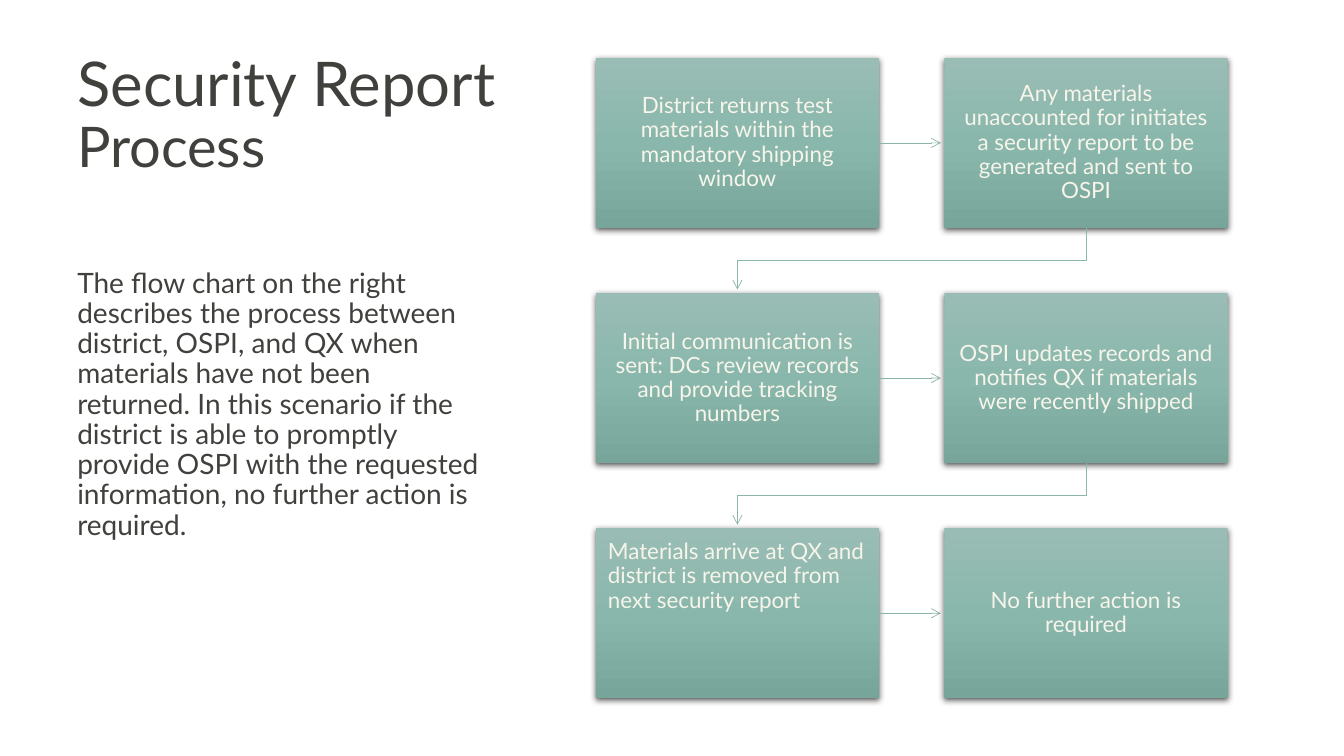
from pptx import Presentation
from pptx.dml.color import RGBColor
from pptx.enum.shapes import MSO_CONNECTOR, MSO_SHAPE
from pptx.enum.text import MSO_ANCHOR, MSO_AUTO_SIZE, PP_ALIGN
from pptx.oxml import parse_xml
from pptx.oxml.ns import nsdecls, qn
from pptx.util import Pt

TITLE = [("Security Report ", 44), ("Process", 40)]
BODY = [("The flow chart on the right describes the process between district, OSPI, "
         "and QX when materials have not been returned. In this scenario if the "
         "district is able to promptly provide OSPI with the requested information, "
         "no further action is required.", 20)]
STEPS = [
    ("District returns test materials within the mandatory shipping window",
     PP_ALIGN.CENTER, MSO_ANCHOR.MIDDLE),
    ("Any materials unaccounted for initiates a security report to be generated "
     "and sent to OSPI", PP_ALIGN.CENTER, MSO_ANCHOR.MIDDLE),
    ("Initial communication is sent: DCs review records and provide tracking numbers",
     PP_ALIGN.CENTER, MSO_ANCHOR.MIDDLE),
    ("OSPI updates records and notifies QX if materials were recently shipped",
     PP_ALIGN.CENTER, MSO_ANCHOR.MIDDLE),
    ("Materials arrive at QX and district is removed from next security report",
     PP_ALIGN.LEFT, MSO_ANCHOR.TOP),
    ("No further action is required", PP_ALIGN.CENTER, MSO_ANCHOR.MIDDLE),
]
THEME = {
    "font": "Lato", "text": "40403D", "step_text": "F7F5EB", "step_size": 16,
    "line": "8CB5AB", "shadow": "000000",
    "gradient": [(0, "99BDB4"), (50, "8AB7AC"), (100, "78A59A")],
}
LEFT, TOP, WIDTH, HEIGHT = 425.5, 41.3, 202.5, 121.5
COL_STEP, ROW_STEP, COLS = 249, 168, 2
ARROW_GAP, INSET, ELBOW_DROP = 2.5, 8.8, 23.4


def write(tf, runs, color, align, anchor):
    tf.word_wrap = True
    tf.auto_size = MSO_AUTO_SIZE.NONE
    tf.vertical_anchor = anchor
    p = tf.paragraphs[0]
    p.alignment = align
    p.line_spacing = 0.9
    p.space_before = Pt(0)
    for text, size in runs:
        r = p.add_run()
        r.text = text
        r.font.name = THEME["font"]
        r.font.size = Pt(size)
        r.font.color.rgb = RGBColor.from_string(color)
    return p


def place(sp, left, top, width, height):
    sp.left, sp.top, sp.width, sp.height = Pt(left), Pt(top), Pt(width), Pt(height)


def add_step(s, left, top, text, align, anchor):
    sp = s.shapes.add_shape(MSO_SHAPE.RECTANGLE, Pt(left), Pt(top), Pt(WIDTH), Pt(HEIGHT))
    sp.line.fill.background()
    sp.shadow.inherit = False
    spPr = sp.element.spPr
    stops = "".join(f'<a:gs pos="{pos * 1000}"><a:srgbClr val="{c}"/></a:gs>'
                    for pos, c in THEME["gradient"])
    spPr.find(qn("a:prstGeom")).addnext(parse_xml(
        f'<a:gradFill {nsdecls("a")} rotWithShape="1"><a:gsLst>{stops}</a:gsLst>'
        '<a:lin ang="5400000" scaled="0"/></a:gradFill>'))
    spPr.find(qn("a:effectLst")).append(parse_xml(
        f'<a:outerShdw {nsdecls("a")} blurRad="{Pt(4.5)}" dist="{Pt(1.5)}" dir="5400000" '
        f'algn="ctr" rotWithShape="0"><a:srgbClr val="{THEME["shadow"]}">'
        '<a:alpha val="63000"/></a:srgbClr></a:outerShdw>'))
    tf = sp.text_frame
    tf.margin_left = tf.margin_right = tf.margin_top = tf.margin_bottom = Pt(INSET)
    write(tf, [(text, THEME["step_size"])], THEME["step_text"], align, anchor)


def style_arrow(sp):
    sp.line.color.rgb = RGBColor.from_string(THEME["line"])
    sp.line.width = Pt(0.5)
    spPr = sp.element.spPr
    spPr.find(qn("a:ln")).append(parse_xml(f'<a:tailEnd {nsdecls("a")} type="arrow"/>'))
    if spPr.find(qn("a:effectLst")) is None:
        spPr.append(parse_xml(f'<a:effectLst {nsdecls("a")}/>'))


def add_side_arrow(s, left, top):
    y = Pt(top + HEIGHT / 2)
    style_arrow(s.shapes.add_connector(
        MSO_CONNECTOR.STRAIGHT, Pt(left + WIDTH), y, Pt(left + COL_STEP - ARROW_GAP), y))


def add_return_arrow(s, left, top):
    start, end = left + WIDTH / 2, LEFT + WIDTH / 2
    bottom = top + HEIGHT
    bend = bottom + ELBOW_DROP
    fb = s.shapes.build_freeform(Pt(start), Pt(bottom))
    fb.add_line_segments(
        [(Pt(x), Pt(y)) for x, y in
         [(start, bend), (end, bend), (end, top + ROW_STEP - ARROW_GAP)]], close=False)
    sp = fb.convert_to_shape()
    sp.fill.background()
    sp.shadow.inherit = False
    style_arrow(sp)


def main():
    prs = Presentation()
    prs.slide_width, prs.slide_height = Pt(960), Pt(540)
    s = prs.slides.add_slide(prs.slide_layouts[1])

    title, body = s.shapes.title, s.placeholders[1]
    place(title, 48, 31, 362, 104.5)
    write(title.text_frame, TITLE, THEME["text"], PP_ALIGN.LEFT, MSO_ANCHOR.MIDDLE)
    place(body, 48, 188.6, 303, 217)
    p = write(body.text_frame, BODY, THEME["text"], PP_ALIGN.LEFT, MSO_ANCHOR.TOP)
    pPr = p._p.get_or_add_pPr()
    pPr.set("marL", "0")
    pPr.set("indent", "0")
    pPr.append(parse_xml(f'<a:buNone {nsdecls("a")}/>'))

    for i, (text, align, anchor) in enumerate(STEPS):
        row, col = divmod(i, COLS)
        left, top = LEFT + col * COL_STEP, TOP + row * ROW_STEP
        add_step(s, left, top, text, align, anchor)
        if col < COLS - 1:
            add_side_arrow(s, left, top)
        elif i < len(STEPS) - 1:
            add_return_arrow(s, left, top)

    prs.save("out.pptx")


if __name__ == "__main__":
    main()
